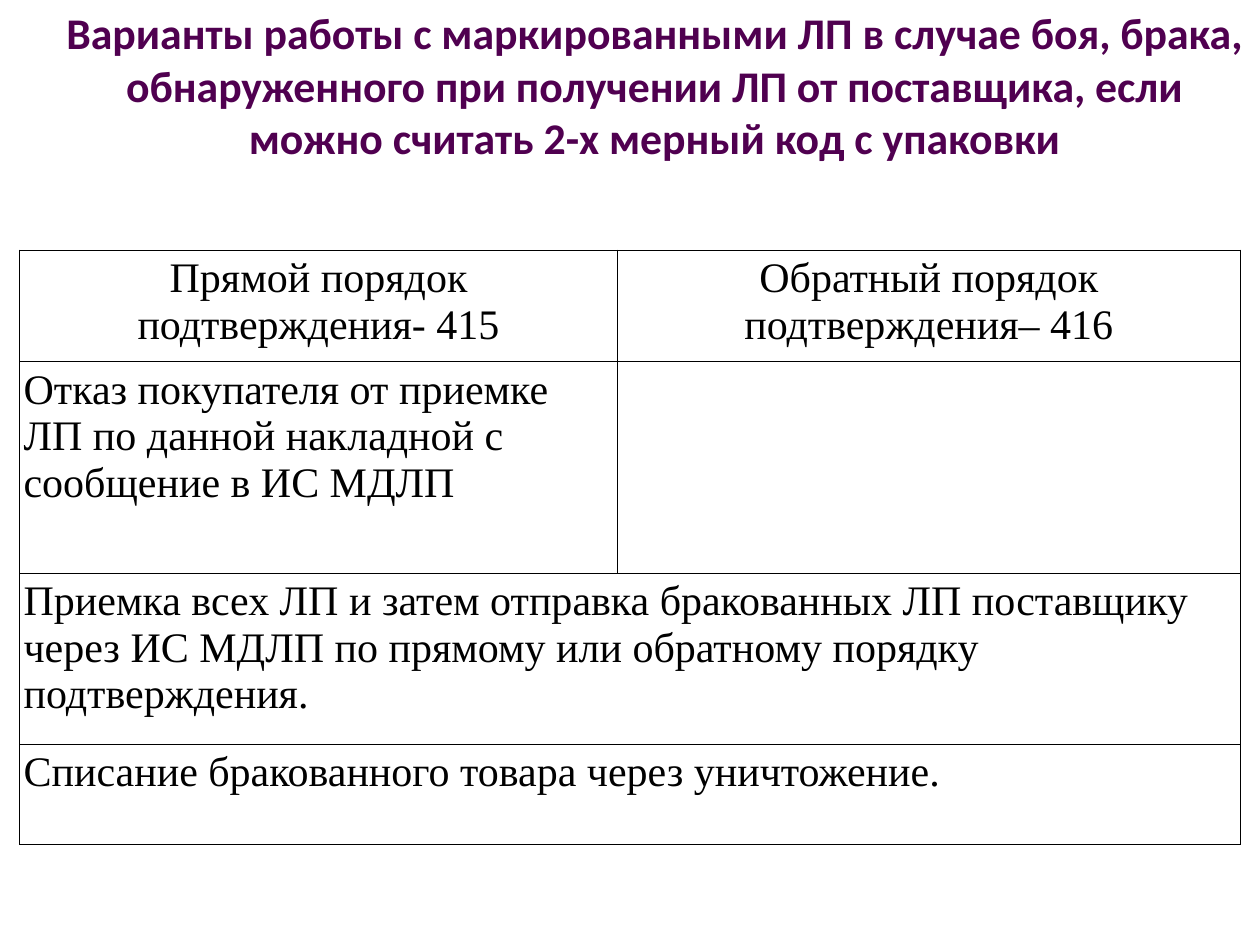
"""Build a slide with a titled table of options for defective marked medicines."""
from lxml import etree
from pptx import Presentation
from pptx.dml.color import RGBColor
from pptx.enum import text
from pptx.oxml import ns
from pptx.util import Pt

COLORS = {"title": "500050", "text": "000000", "border": "000000"}
TITLE = ("Варианты работы с маркированными ЛП в случае боя, брака, обнаруженного "
         "при получении ЛП от поставщика, если можно считать 2-х мерный код с упаковки")
ROWS = [
    ["Прямой порядок подтверждения- 415", "Обратный порядок подтверждения– 416"],
    ["Отказ покупателя от приемке ЛП по данной накладной с сообщение в ИС МДЛП", ""],
    ["Приемка всех ЛП и затем отправка бракованных ЛП поставщику через ИС МДЛП "
     "по прямому или обратному порядку подтверждения."],
    ["Списание бракованного товара через уничтожение."],
]
WIDTHS = [341.5, 356]
HEIGHTS = [63.5, 121, 97.75, 57.25]


def style(para, name, size, color, align, bold=False):
    para.alignment = align
    para.font.name = name
    para.font.size = Pt(size)
    para.font.bold = bold
    para.font.color.rgb = RGBColor.from_string(COLORS[color])


def add_borders(cell):
    properties = cell._tc.get_or_add_tcPr()
    for place, side in enumerate(("lnL", "lnR", "lnT", "lnB")):
        line = etree.Element(ns.qn(f"a:{side}"), w=str(Pt(0.75)))
        fill = etree.SubElement(line, ns.qn("a:solidFill"))
        etree.SubElement(fill, ns.qn("a:srgbClr"), val=COLORS["border"])
        properties.insert(place, line)


deck = Presentation()
deck.slide_width, deck.slide_height = Pt(720), Pt(540)
page = deck.slides.add_slide(deck.slide_layouts[6])

title = page.shapes.add_textbox(Pt(28), Pt(0), Pt(692), Pt(98)).text_frame
title.word_wrap = True
title.text = TITLE
style(title.paragraphs[0], "Calibri", 25, "title", text.PP_ALIGN.CENTER, True)

table = page.shapes.add_table(len(ROWS), len(WIDTHS), Pt(11.25), Pt(143),
                              Pt(sum(WIDTHS)), Pt(sum(HEIGHTS))).table
table.first_row = table.horz_banding = False
for column, width in zip(table.columns, WIDTHS):
    column.width = Pt(width)

for index, (words, height) in enumerate(zip(ROWS, HEIGHTS)):
    table.rows[index].height = Pt(height)
    if len(words) == 1:
        table.cell(index, 0).merge(table.cell(index, 1))
    align = text.PP_ALIGN.LEFT if index else text.PP_ALIGN.CENTER
    for number, cell in enumerate(table.rows[index].cells):
        cell.fill.background()
        add_borders(cell)
        cell.margin_left = cell.margin_right = Pt(2.25)
        cell.margin_top = cell.margin_bottom = Pt(3)
        if number < len(words):
            cell.text = words[number]
            style(cell.text_frame.paragraphs[0], "Times New Roman", 24, "text", align)

deck.save("out.pptx")
